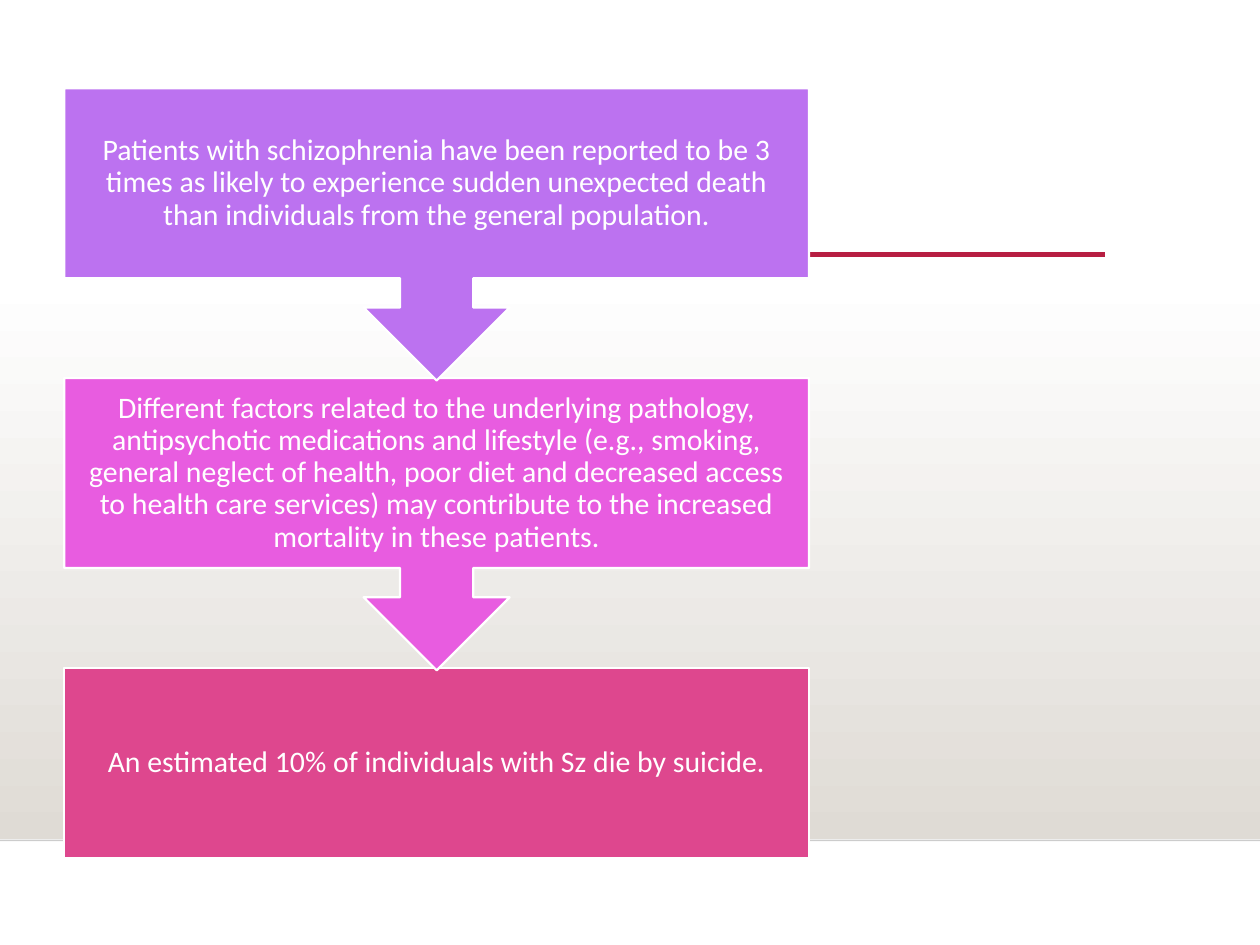
from lxml import etree
from pptx import Presentation, util as u
from pptx.dml.color import RGBColor
from pptx.enum import shapes, text
from pptx.oxml import ns

COLORS = {"white": "FFFFFF", "floor": "DFDBD5", "edge": "000001", "accent": "B71E42",
          "purple": "BC72F0", "magenta": "E85CE0", "rose": "DE478E"}
STEPS = [
    ("purple", "Patients with schizophrenia have been reported to be 3 times as likely to "
     "experience sudden unexpected death than individuals from the general population."),
    ("magenta", "Different factors related to the underlying pathology, antipsychotic "
     "medications and lifestyle (e.g., smoking, general neglect of health, poor diet and "
     "decreased access to health care services) may contribute to the increased mortality "
     "in these patients."),
    ("rose", "An estimated 10% of individuals with Sz die by suicide."),
]
LEFT, TOP, WIDTH = 0.51, 0.7, 5.91
PITCH, BOX_HEIGHT, CALLOUT_HEIGHT = 2.3, 1.51, 2.32


def color(name):
    return RGBColor.from_string(COLORS[name])


def add_rule(left, right, top, name, weight):
    rule = slide.shapes.add_connector(shapes.MSO_CONNECTOR.STRAIGHT, u.Inches(left),
                                      u.Inches(top), u.Inches(right), u.Inches(top))
    rule.line.color.rgb = color(name)
    rule.line.width = u.Pt(weight)
    etree.SubElement(rule._element.spPr, ns.qn("a:effectLst"))
    return rule


presentation = Presentation()
presentation.slide_width, presentation.slide_height = u.Inches(10), u.Inches(7.5)
slide = presentation.slides.add_slide(presentation.slide_layouts[6])

floor = slide.shapes.add_shape(shapes.MSO_SHAPE.RECTANGLE, 0, u.Inches(2.2),
                               presentation.slide_width, u.Inches(4.46))
floor.shadow.inherit = False
floor.line.fill.background()
floor.fill.gradient()
floor.fill.gradient_angle = 270
for stop, name in zip(floor.fill.gradient_stops, ("white", "floor")):
    stop.color.rgb = color(name)

edge = add_rule(0, 10, 6.67, "edge", 1)
edge_color = edge._element.spPr.find(".//" + ns.qn("a:srgbClr"))
etree.SubElement(edge_color, ns.qn("a:alpha"), val="20000")
add_rule(1.58, 8.77, 2.02, "accent", 2.5)

for row, (name, wording) in reversed(list(enumerate(STEPS))):
    last = row == len(STEPS) - 1
    left, top, width = u.Inches(LEFT), u.Inches(TOP + row * PITCH), u.Inches(WIDTH)
    kind = shapes.MSO_SHAPE.RECTANGLE if last else shapes.MSO_SHAPE.UP_ARROW_CALLOUT
    height = BOX_HEIGHT if last else CALLOUT_HEIGHT
    shape = slide.shapes.add_shape(kind, left, top, width, u.Inches(height))
    shape.rotation = 0 if last else 180
    shape.shadow.inherit = False
    shape.fill.solid()
    shape.fill.fore_color.rgb = color(name)
    shape.line.color.rgb = color("white")
    shape.line.width = u.Pt(1.25)

    label = slide.shapes.add_textbox(left, top, width, u.Inches(BOX_HEIGHT))
    frame = label.text_frame
    frame.text = wording
    frame.word_wrap = True
    frame.vertical_anchor = text.MSO_ANCHOR.MIDDLE
    frame.margin_left = frame.margin_right = u.Inches(0.13)
    frame.margin_top = frame.margin_bottom = u.Inches(0.13)
    paragraph = frame.paragraphs[0]
    paragraph.alignment = text.PP_ALIGN.CENTER
    paragraph.line_spacing = 0.9
    font = paragraph.runs[0].font
    font.name, font.size = "Calibri", u.Pt(17)
    font.color.rgb = color("white")

presentation.save("out.pptx")
